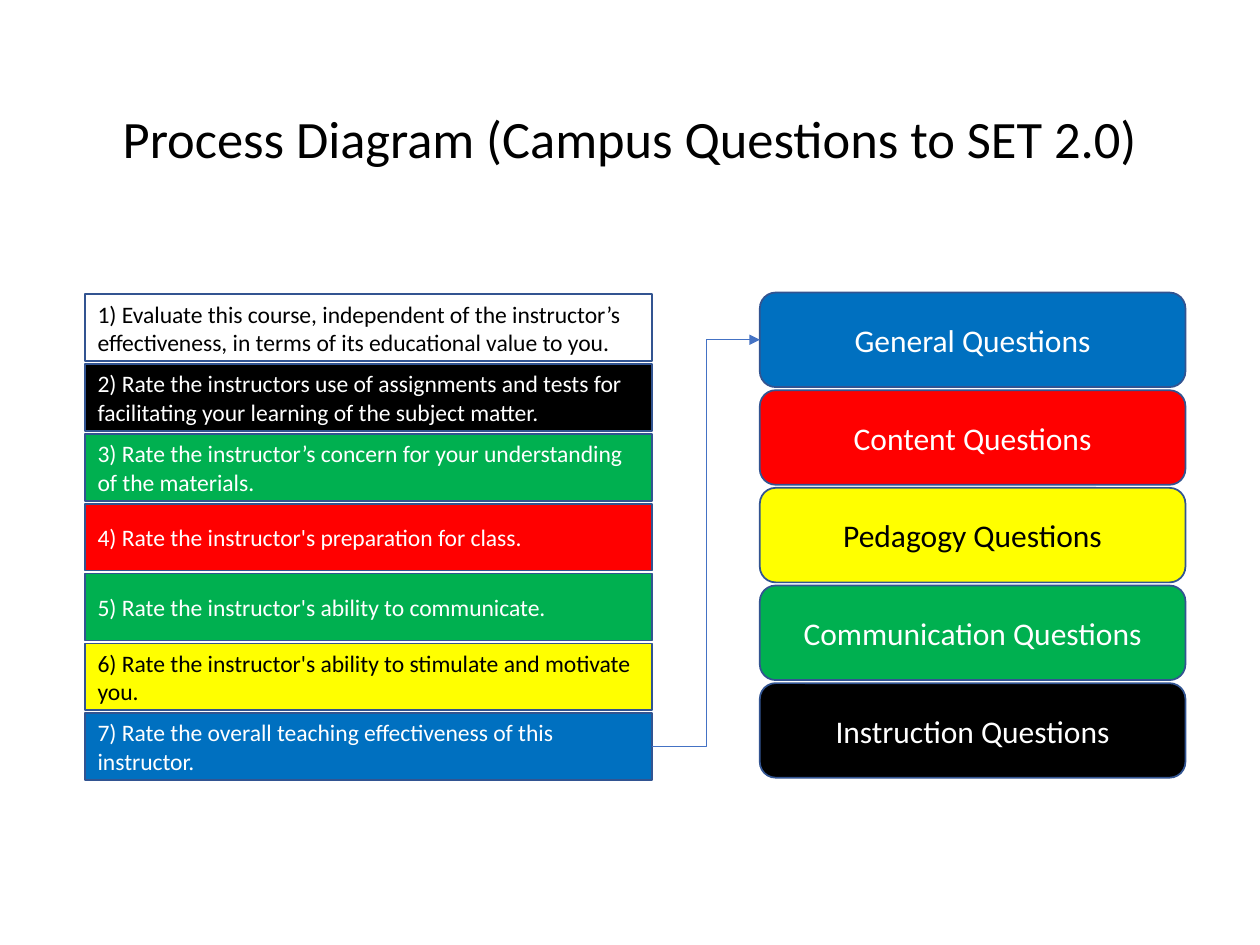
"""Build a slide that maps campus questions to SET 2.0 question groups."""
from lxml import etree
from pptx import Presentation
from pptx.dml.color import RGBColor
from pptx.enum.shapes import MSO_CONNECTOR, MSO_SHAPE
from pptx.enum.text import MSO_ANCHOR, MSO_AUTO_SIZE, PP_ALIGN
from pptx.oxml.ns import qn
from pptx.util import Pt

RECT, ROUND = MSO_SHAPE.RECTANGLE, MSO_SHAPE.ROUNDED_RECTANGLE
ELBOW = MSO_CONNECTOR.ELBOW
LEFT, CENTER = PP_ALIGN.LEFT, PP_ALIGN.CENTER
MIDDLE, FIXED = MSO_ANCHOR.MIDDLE, MSO_AUTO_SIZE.NONE

WHITE, BLACK, GREEN = "FFFFFF", "000000", "00B050"
RED, YELLOW, BLUE = "FF0000", "FFFF00", "0070C0"

ITEMS = [
    ("1) Evaluate this course, independent of the instructor’s effectiveness, "
     "in terms of its educational value to you.", WHITE),
    ("2) Rate the instructors use of assignments and tests for facilitating "
     "your learning of the subject matter.", BLACK),
    ("3) Rate the instructor’s concern for your understanding of the materials.",
     GREEN),
    ("4) Rate the instructor's preparation for class.", RED),
    ("5) Rate the instructor's ability to communicate.", GREEN),
    ("6) Rate the instructor's ability to stimulate and motivate you.", YELLOW),
    ("7) Rate the overall teaching effectiveness of this instructor.", BLUE),
]
GROUPS = [
    ("General Questions", BLUE),
    ("Content Questions", RED),
    ("Pedagogy Questions", YELLOW),
    ("Communication Questions", GREEN),
    ("Instruction Questions", BLACK),
]


def color(code):
    return RGBColor.from_string(code)


def write(frame, text, size=18, ink=BLACK, align=CENTER, font="Calibri", space=None):
    frame.word_wrap = True
    frame.auto_size = FIXED
    frame.vertical_anchor = MIDDLE
    para = frame.paragraphs[0]
    para.alignment = align
    para.line_spacing = space
    run = para.add_run()
    run.text = text
    run.font.name = font
    run.font.size = Pt(size)
    run.font.color.rgb = color(ink)


class Deck:
    """Hold the line style and the current slide."""

    edge, wire = "325491", "4472C4"

    def __init__(self, slide):
        self.slide = slide

    def title(self, text, x, y, w, h):
        shape = self.slide.shapes.title
        shape.left, shape.top, shape.width, shape.height = map(Pt, (x, y, w, h))
        write(shape.text_frame, text, size=30, space=0.9)

    def box(self, kind, text, fill, x, y, w, h, **style):
        shape = self.slide.shapes.add_shape(kind, *map(Pt, (x, y, w, h)))
        shape.shadow.inherit = False
        shape.fill.solid()
        shape.fill.fore_color.rgb = color(fill)
        shape.line.color.rgb = color(self.edge)
        shape.line.width = Pt(1)
        ink = BLACK if fill in (WHITE, YELLOW) else WHITE
        write(shape.text_frame, text, ink=ink, **style)
        return shape

    def stack(self, kind, rows, x, y, w, h, step, **style):
        return [self.box(kind, text, fill, x, y + i * step, w, h, **style)
                for i, (text, fill) in enumerate(rows)]

    def arrow(self, start, end):
        link = self.slide.shapes.add_connector(ELBOW, 0, 0, 0, 0)
        link.begin_connect(start, 3)
        link.end_connect(end, 1)
        link.line.color.rgb = color(self.wire)
        link.line.width = Pt(0.5)
        etree.SubElement(link.line._get_or_add_ln(), qn("a:tailEnd"), type="triangle")
        etree.SubElement(link._element.spPr, qn("a:effectLst"))


def main():
    show = Presentation()
    show.slide_width, show.slide_height = Pt(720), Pt(540)
    deck = Deck(show.slides.add_slide(show.slide_layouts[5]))
    deck.title("Process Diagram (Campus Questions to SET 2.0)", 49.7, 28.8, 620.6, 104.4)
    groups = deck.stack(ROUND, GROUPS, 434.2, 167.2, 243.2, 54, 55.8)
    items = deck.stack(RECT, ITEMS, 48.7, 168.2, 324, 38.2, 39.9, size=13.5, align=LEFT)
    deck.arrow(items[-1], groups[0])
    show.save("out.pptx")


if __name__ == "__main__":
    main()
